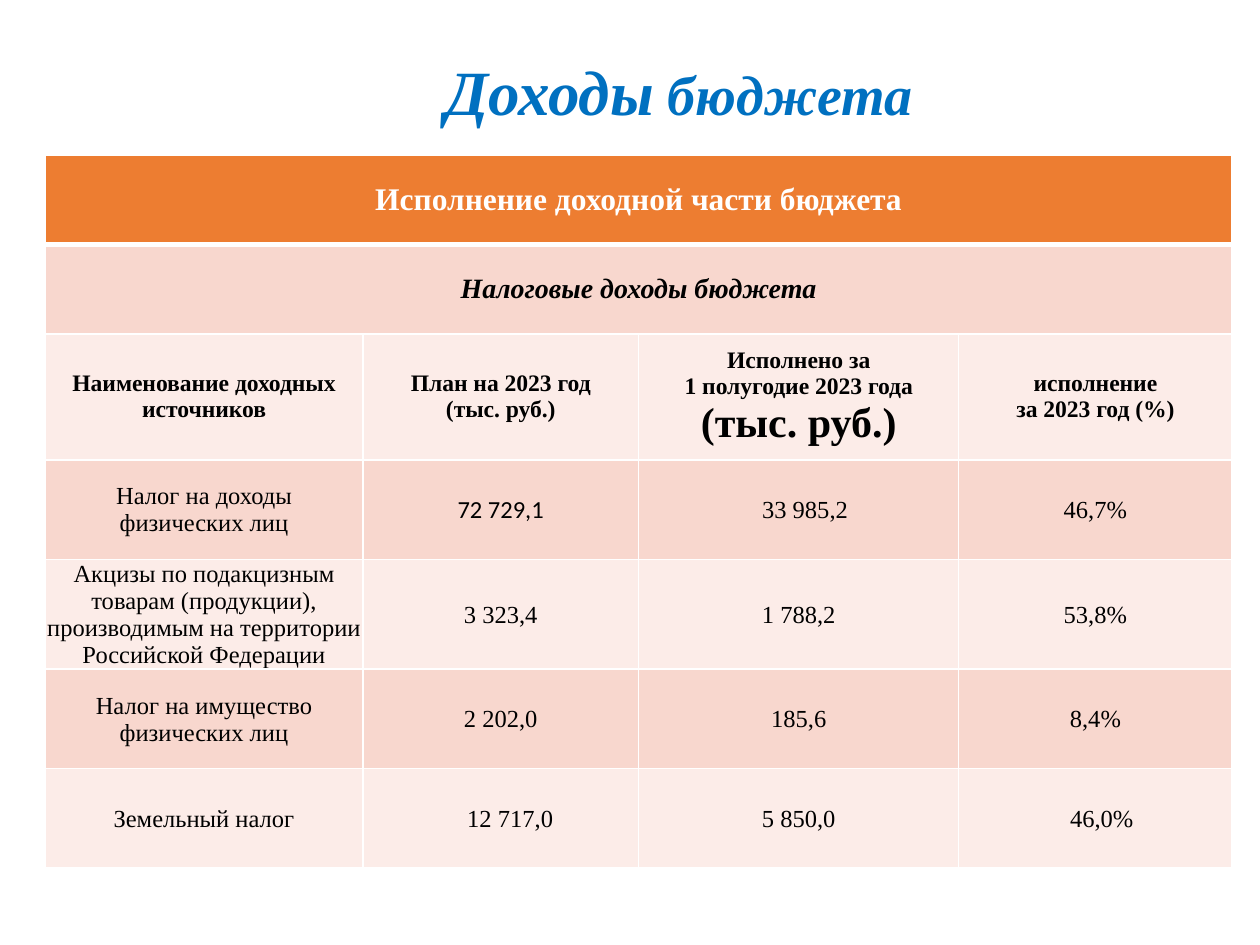
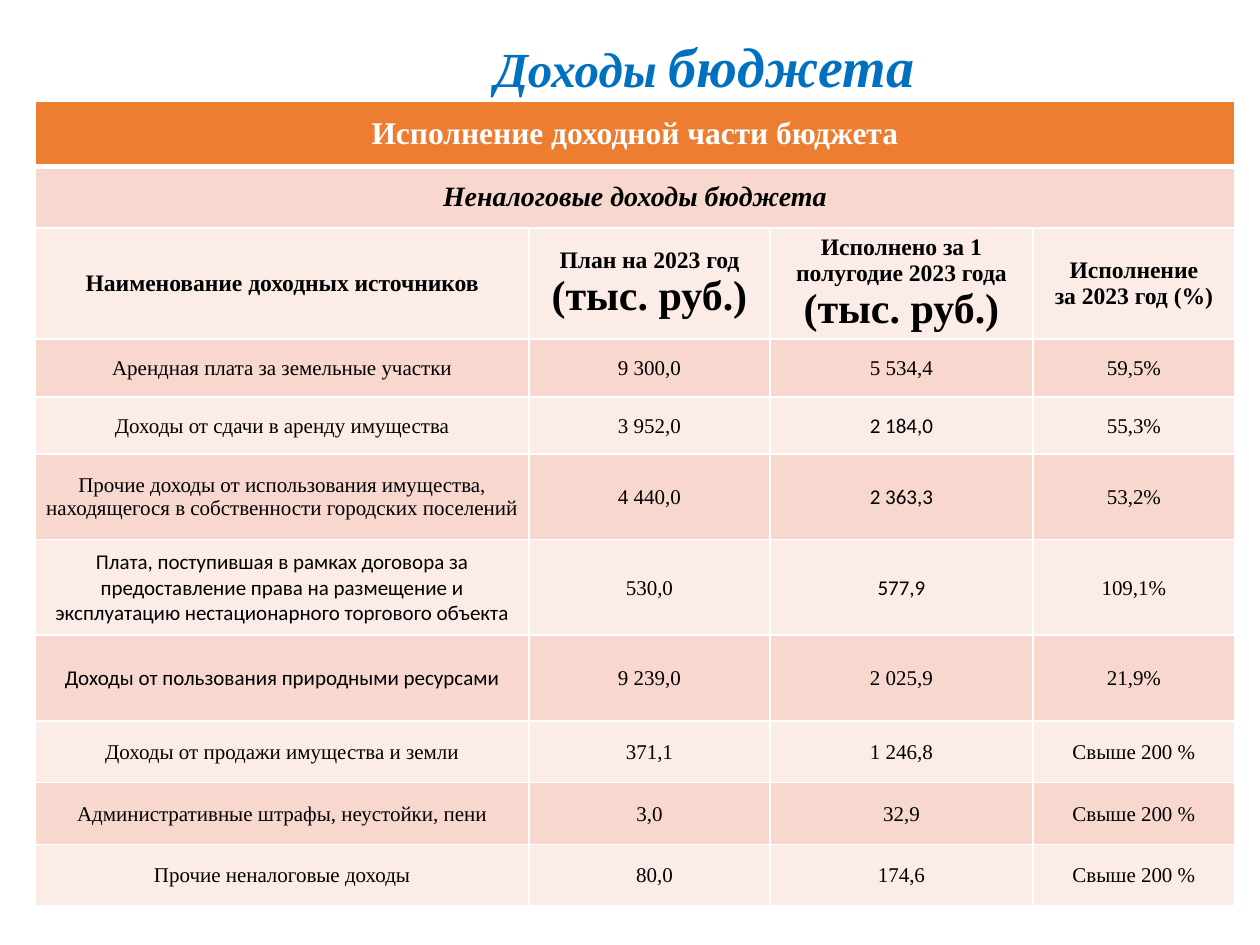
from copy import deepcopy
from pptx import Presentation
from pptx import oxml
from pptx import util as u
from pptx.dml.color import RGBColor
from pptx.enum import text
from pptx.oxml import ns

SERIF, SANS = "Times New Roman", "Calibri"
BLUE, WHITE, BLACK = "0070C0", "FFFFFF", "000000"
ORANGE, ROSE, PALE = "ED7D31", "F8D7CE", "FCECE8"


def color(code):
    return RGBColor.from_string(code)


class Deck:
    def __init__(self):
        self.prs = Presentation()
        self.prs.slide_width, self.prs.slide_height = u.Inches(10), u.Inches(7.5)
        self.slide = None

    def page(self):
        self.slide = self.prs.slides.add_slide(self.prs.slide_layouts[5])

    def style(self, run, size, tint=BLACK, face=SERIF, bold=False, slant=False):
        font = run.font
        font.size, font.name = u.Pt(size), face
        font.bold, font.italic = bold, slant
        font.color.rgb = color(tint)

    def title(self, box, parts):
        shape = self.slide.shapes.title
        shape.left, shape.top, shape.width, shape.height = map(u.Inches, box)
        frame = shape.text_frame
        frame.word_wrap = True
        frame.auto_size = text.MSO_AUTO_SIZE.NONE
        frame.vertical_anchor = text.MSO_ANCHOR.MIDDLE
        para = frame.paragraphs[0]
        para.alignment = text.PP_ALIGN.CENTER
        for words, size in parts:
            run = para.add_run()
            run.text = words
            self.style(run, size, BLUE, bold=True, slant=True)

    def edges(self, cell, top, bottom):
        props = cell._tc.get_or_add_tcPr()
        for side, width in (("L", 1), ("R", 1), ("T", top), ("B", bottom)):
            props.append(oxml.parse_xml(
                f'<a:ln{side} {ns.nsdecls("a")} w="{u.Pt(width)}"><a:solidFill>'
                f'<a:srgbClr val="{WHITE}"/></a:solidFill></a:ln{side}>'))

    def cell(self, cell, words, fill, size, large=False, **look):
        cell.fill.solid()
        cell.fill.fore_color.rgb = color(fill)
        cell.vertical_anchor = text.MSO_ANCHOR.MIDDLE
        cell.text_frame.text = words
        for i, para in enumerate(cell.text_frame.paragraphs):
            para.alignment = text.PP_ALIGN.CENTER
            for run in para.runs:
                self.style(run, 24 if large and i else size, **look)
            for gap in para._p.findall(ns.qn("a:br")):
                gap.append(deepcopy(para.runs[0]._r.rPr))

    def table(self, spot, cols, rows, data, size, large, sans, shift):
        left, top = spot
        box = map(u.Inches, (left, top, sum(cols), sum(rows)))
        grid = self.slide.shapes.add_table(len(rows), len(cols), *box).table
        grid.first_row = grid.horz_banding = False
        for col, width in zip(grid.columns, cols):
            col.width = u.Inches(width)
        for row, height in zip(grid.rows, rows):
            row.height = u.Inches(height)
        for r in range(len(rows)):
            fill = ROSE if r % 2 else PALE
            for c in range(len(cols)):
                cell = grid.cell(r, c)
                self.edges(cell, 3 if r == 1 else 1, 3 if r == 0 else 1)
                if r < 2:
                    continue
                words = data[r][c]
                if r == 2:
                    self.cell(cell, words, fill, 13.5, c in large, bold=True)
                    continue
                face = SANS if (r, c) in sans else SERIF
                self.cell(cell, words, fill, size, face=face)
                if (r, c) != (3, 0):
                    cell.margin_left = u.Inches(0.01 + shift.get((r, c), 0))
                    cell.margin_right = cell.margin_top = u.Inches(0.01)
                    cell.margin_bottom = 0
        for r in (0, 1):
            grid.cell(r, 0).merge(grid.cell(r, len(cols) - 1))
        self.cell(grid.cell(0, 0), data[0], ORANGE, 18, tint=WHITE, bold=True)
        self.cell(grid.cell(1, 0), data[1], ROSE, 16, bold=True, slant=True)


HEAD = "Исполнение доходной части бюджета"
NAME = "Наименование доходных источников"
PLAN = "План на 2023 год\n(тыс. руб.)"

TAXES = [
    HEAD,
    "Налоговые доходы бюджета",
    (NAME, PLAN, "Исполнено за\v1 полугодие 2023 года\n(тыс. руб.)",
     "исполнение\vза 2023 год (%)"),
    ("Налог на доходы физических лиц", "72 729,1", "33 985,2", "46,7%"),
    ("Акцизы по подакцизным товарам (продукции), производимым на территории "
     "Российской Федерации", "3 323,4", "1 788,2", "53,8%"),
    ("Налог на имущество физических лиц", "2 202,0", "185,6", "8,4%"),
    ("Земельный налог", "12 717,0", "5 850,0", "46,0%"),
]

OTHER = [
    HEAD,
    "Неналоговые доходы бюджета",
    (NAME, PLAN, "Исполнено за 1 полугодие 2023 года\n(тыс. руб.)",
     "Исполнение\vза 2023 год (%)"),
    ("Арендная плата за земельные участки", "9 300,0", "5 534,4", "59,5%"),
    ("Доходы от сдачи в аренду имущества", "3 952,0", "2 184,0", "55,3%"),
    ("Прочие доходы от использования имущества, находящегося в собственности "
     "городских поселений", "4 440,0", "2 363,3", "53,2%"),
    ("Плата, поступившая в рамках договора за предоставление права на размещение "
     "и эксплуатацию нестационарного торгового объекта",
     "530,0", "577,9", "109,1%"),
    ("Доходы от пользования природными ресурсами", "9 239,0", "2 025,9", "21,9%"),
    ("Доходы от продажи имущества и земли", "371,1", "1 246,8", "Свыше 200 %"),
    ("Административные штрафы, неустойки, пени", "3,0", "32,9", "Свыше 200 %"),
    ("Прочие неналоговые доходы", "80,0", "174,6", "Свыше 200 %"),
]


def main():
    deck = Deck()

    deck.page()
    deck.title((1.14, 0.36, 8.5, 0.71), [("Доходы", 36), (" бюджета", 32)])
    deck.table((0.36, 1.23), (2.52, 2.19, 2.54, 2.17),
               (0.71, 0.71, 1, 0.79, 0.87, 0.79, 0.79), TAXES, 14,
               large={2}, sans={(3, 1)},
               shift={(3, 2): 0.1, (6, 1): 0.15, (6, 3): 0.1})

    deck.page()
    deck.title((3.74, 0.2, 3.7, 0.64), [("Доходы ", 28), ("бюджета", 32)])
    deck.table((0.28, 0.8), (3.92, 1.91, 2.09, 1.6),
               (0.52, 0.49, 0.88, 0.46, 0.45, 0.68, 0.76, 0.68, 0.49, 0.49, 0.49),
               OTHER, 12, large={1, 2},
               sans={(4, 2), (5, 2), (6, 0), (6, 2), (7, 0)},
               shift={(10, 1): 0.08})

    deck.prs.save("out.pptx")


if __name__ == "__main__":
    main()
